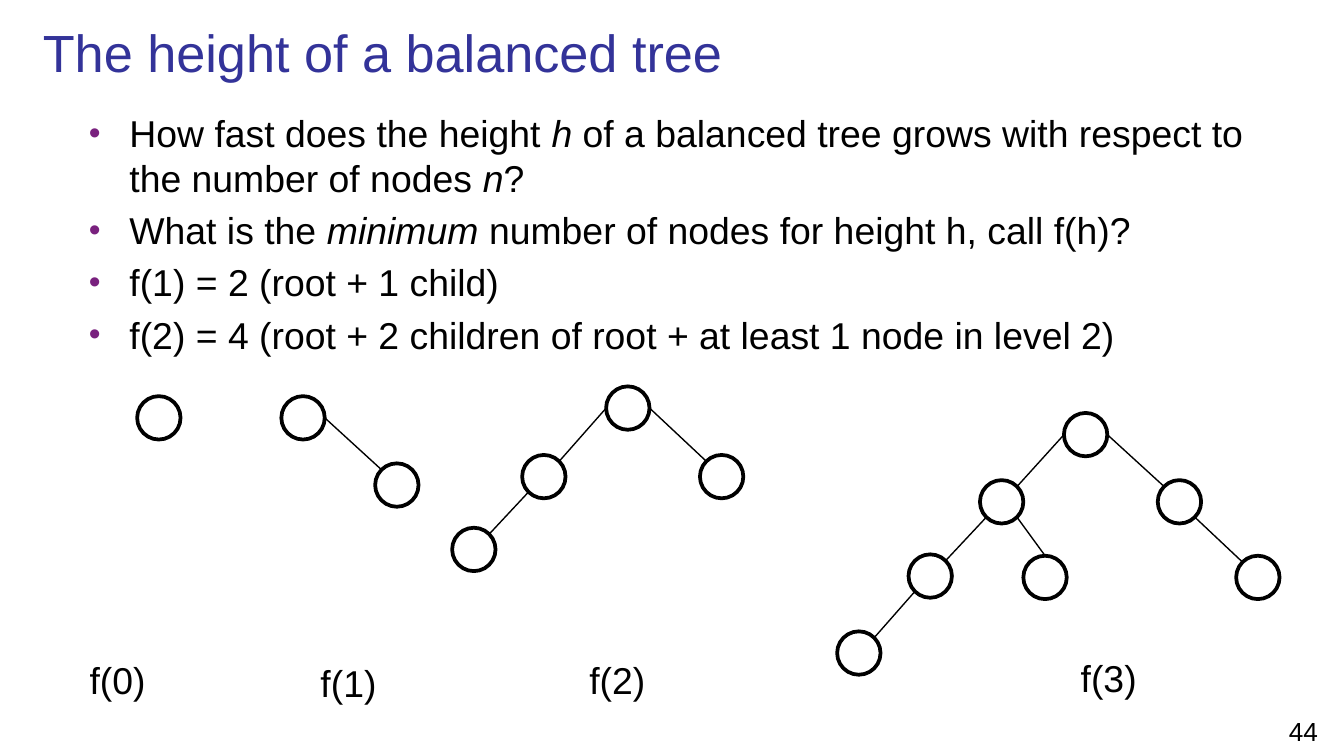
from dataclasses import dataclass

from lxml.etree import SubElement
from pptx import Presentation
from pptx.dml.color import RGBColor
from pptx.enum.shapes import MSO_CONNECTOR as Connector, MSO_SHAPE as Shape
from pptx.enum.text import MSO_ANCHOR as Anchor, MSO_AUTO_SIZE as AutoSize, PP_ALIGN as Align
from pptx.oxml.ns import qn
from pptx.util import Emu, Pt

PX = 9525
NODE = 31
SITES = {
    "left": (0, 0.5), "right": (1, 0.5), "top": (0.5, 0),
    "top_left": (0.15, 0.15), "top_right": (0.85, 0.15),
    "bottom_left": (0.15, 0.85), "bottom_right": (0.85, 0.85),
}
ROOT_LEFT = ("left", "top_right")
ROOT_RIGHT = ("right", "top_left")
LEFT = ("bottom_left", "top_right")
RIGHT = ("bottom_right", "top_left")
STEEP = ("bottom_right", "top")

BULLETS = [
    "How fast does the height *h* of a balanced tree grows with respect to the number of nodes *n*?",
    "What is the *minimum* number of nodes for height h, call f(h)?",
    "f(1) = 2 (root + 1 child)",
    "f(2) = 4 (root + 2 children of root + at least 1 node in level 2)",
]
TREES = [
    ("f(0)", (54, 465), [(98, 283)], []),
    ("f(1)", (219, 467), [(201, 283), (268, 331)], [(0, 1, ROOT_RIGHT)]),
    ("f(2)", (411, 465), [(433, 276), (373, 325), (500, 325), (323, 377)],
     [(0, 1, ROOT_LEFT), (0, 2, ROOT_RIGHT), (1, 3, LEFT)]),
    ("f(3)", (762, 463),
     [(760, 295), (700, 343), (827, 343), (649, 396), (731, 397), (883, 397), (598, 451)],
     [(0, 1, ROOT_LEFT), (0, 2, ROOT_RIGHT), (1, 3, LEFT), (1, 4, STEEP),
      (2, 5, RIGHT), (3, 6, LEFT)]),
]


@dataclass(frozen=True)
class Theme:
    font: str = "Arial"
    title: str = "333399"
    ink: str = "000000"
    paper: str = "FFFFFF"
    bullet: str = "79217E"
    title_size: int = 28
    body_size: int = 20
    number_size: int = 14
    node_line: float = 2
    edge_line: float = 0.75


def px(*lengths):
    return [Emu(round(n * PX)) for n in lengths]


class Deck:
    """Draws styled elements on the current slide."""

    def __init__(self, theme, width, height):
        self.theme = theme
        self.prs = Presentation()
        self.prs.slide_width, self.prs.slide_height = px(width, height)
        self.slide = None

    def add_slide(self):
        self.slide = self.prs.slides.add_slide(self.prs.slide_layouts[5])

    def style(self, p, size, color):
        for r in p.runs:
            r.font.name = self.theme.font
            r.font.size = Pt(size)
            r.font.color.rgb = RGBColor.from_string(color)

    def title(self, text, box):
        sp = self.slide.shapes.title
        sp.left, sp.top, sp.width, sp.height = px(*box)
        tf = sp.text_frame
        tf.text = text
        tf.auto_size = AutoSize.NONE
        tf.vertical_anchor = Anchor.MIDDLE
        tf.paragraphs[0].alignment = Align.LEFT
        self.style(tf.paragraphs[0], self.theme.title_size, self.theme.title)

    def label(self, text, box, size):
        tf = self.slide.shapes.add_textbox(*px(*box)).text_frame
        tf.text = text
        tf.word_wrap = False
        p = tf.paragraphs[0]
        p.alignment = Align.CENTER
        self.style(p, size, self.theme.ink)

    def bullets(self, items, box):
        tf = self.slide.shapes.add_textbox(*px(*box)).text_frame
        tf.word_wrap = True
        for i, item in enumerate(items):
            p = tf.add_paragraph() if i else tf.paragraphs[0]
            for j, part in enumerate(item.split("*")):
                r = p.add_run()
                r.text = part
                r.font.italic = j % 2 == 1
            p.space_before = Pt(4)
            self.style(p, self.theme.body_size, self.theme.ink)
            self.bullet(p)

    def bullet(self, p):
        pPr = p._p.get_or_add_pPr()
        indent, hanging = px(41, -29)
        pPr.set("marL", str(indent))
        pPr.set("indent", str(hanging))
        color = SubElement(pPr, qn("a:buClr"))
        SubElement(color, qn("a:srgbClr"), val=self.theme.bullet)
        SubElement(pPr, qn("a:buSzPct"), val="90000")
        SubElement(pPr, qn("a:buFont"), typeface=self.theme.font)
        SubElement(pPr, qn("a:buChar"), char="•")

    def node(self, x, y):
        sp = self.slide.shapes.add_shape(Shape.OVAL, *px(x, y, NODE, NODE))
        sp.shadow.inherit = False
        sp.fill.solid()
        sp.fill.fore_color.rgb = RGBColor.from_string(self.theme.paper)
        sp.line.color.rgb = RGBColor.from_string(self.theme.ink)
        sp.line.width = Pt(self.theme.node_line)

    def edge(self, parent, child, sites):
        ends = [at + NODE * part
                for node, site in zip((parent, child), sites)
                for at, part in zip(node, SITES[site])]
        line = self.slide.shapes.add_connector(Connector.STRAIGHT, *px(*ends))
        line.line.color.rgb = RGBColor.from_string(self.theme.ink)
        line.line.width = Pt(self.theme.edge_line)
        SubElement(line._element.spPr, qn("a:effectLst"))

    def tree(self, name, label_at, nodes, edges):
        for x, y in nodes:
            self.node(x, y)
        for parent, child, sites in edges:
            self.edge(nodes[parent], nodes[child], sites)
        self.label(name, (*label_at, 60, 42), self.theme.body_size)


def main():
    deck = Deck(Theme(), 960, 540)
    deck.add_slide()
    deck.title("The height of a balanced tree", (21, 8, 935, 57))
    deck.bullets(BULLETS, (42, 74, 879, 202))
    for tree in TREES:
        deck.tree(*tree)
    deck.label("44", (902, 506, 58, 29), deck.theme.number_size)
    deck.prs.save("out.pptx")


if __name__ == "__main__":
    main()
